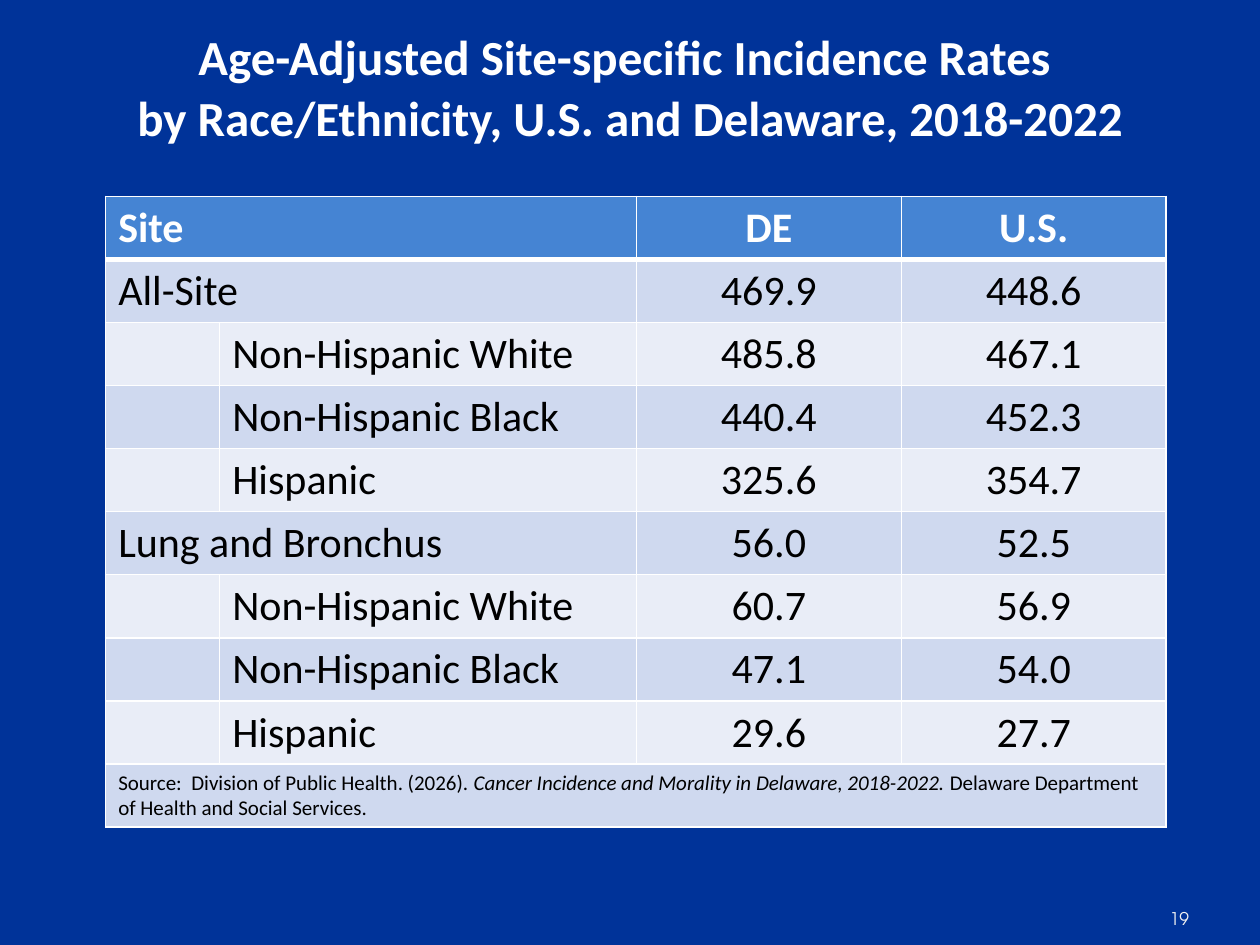
from dataclasses import dataclass

from lxml.etree import SubElement
from pptx import Presentation
from pptx.dml.color import RGBColor
from pptx.enum.text import MSO_ANCHOR, PP_ALIGN
from pptx.oxml.ns import qn
from pptx.util import Cm, Pt

NAVY = RGBColor(0x00, 0x33, 0x99)
WHITE = RGBColor(0xFF, 0xFF, 0xFF)
BLACK = RGBColor(0x00, 0x00, 0x00)
PALE_GREY = RGBColor(0xF2, 0xF2, 0xF2)
HEADER_BLUE = RGBColor(0x45, 0x84, 0xD3)
BAND_DARK = RGBColor(0xCF, 0xD9, 0xEF)
BAND_LIGHT = RGBColor(0xE9, 0xED, 0xF7)

COLUMN_WIDTHS = (Cm(2.3), Cm(8.4), Cm(5.34), Cm(5.34))
ROW_HEIGHT = Cm(1.27)


@dataclass
class Rate:
    label: str
    de: str
    us: str
    is_group: bool = False


@dataclass
class SourcePart:
    text: str
    italic: bool = False


RATES = [
    Rate("Site", "DE", "U.S.", True),
    Rate("All-Site", "469.9", "448.6", True),
    Rate("Non-Hispanic White", "485.8", "467.1"),
    Rate("Non-Hispanic Black", "440.4", "452.3"),
    Rate("Hispanic", "325.6", "354.7"),
    Rate("Lung and Bronchus", "56.0", "52.5", True),
    Rate("Non-Hispanic White", "60.7", "56.9"),
    Rate("Non-Hispanic Black", "47.1", "54.0"),
    Rate("Hispanic", "29.6", "27.7"),
]

SOURCE = [
    SourcePart("Source:  Division of Public Health. (2026)."),
    SourcePart(" Cancer Incidence and Morality in Delaware, 2018-2022. ", True),
    SourcePart("Delaware Department of Health and Social Services."),
]


def set_font(p, size: float, color: RGBColor, bold: bool = False,
             name: str = "Calibri") -> None:
    p.font.name = name
    p.font.size = Pt(size)
    p.font.bold = bold
    p.font.color.rgb = color


def add_text(s, left: Cm, top: Cm, width: Cm, height: Cm, text: str):
    tf = s.shapes.add_textbox(left, top, width, height).text_frame
    tf.word_wrap = True
    tf.vertical_anchor = MSO_ANCHOR.MIDDLE
    p = tf.paragraphs[0]
    p.text = text
    return tf, p


def style_cell(cell, row: int) -> None:
    widths = {
        "a:lnL": 1,
        "a:lnR": 1,
        "a:lnT": 3 if row == 1 else 1,
        "a:lnB": 3 if row == 0 else 1,
    }
    tc_pr = cell._tc.get_or_add_tcPr()
    for tag, width in widths.items():
        line = SubElement(tc_pr, qn(tag), w=str(Pt(width)))
        fill = SubElement(line, qn("a:solidFill"))
        SubElement(fill, qn("a:srgbClr"), val=str(WHITE))
    cell.fill.solid()
    band = BAND_DARK if row % 2 else BAND_LIGHT
    cell.fill.fore_color.rgb = band if row else HEADER_BLUE


def fill_rate(table, row: int, rate: Rate) -> None:
    if rate.is_group:
        table.cell(row, 0).merge(table.cell(row, 1))
    entries = {0 if rate.is_group else 1: rate.label, 2: rate.de, 3: rate.us}
    for column, text in entries.items():
        p = table.cell(row, column).text_frame.paragraphs[0]
        p.text = text
        p.alignment = PP_ALIGN.CENTER if column > 1 else PP_ALIGN.LEFT
        set_font(p, 24, BLACK if row else WHITE, bold=row == 0)


def fill_source(table, row: int) -> None:
    cell = table.cell(row, 0)
    cell.merge(table.cell(row, len(COLUMN_WIDTHS) - 1))
    p = cell.text_frame.paragraphs[0]
    for part in SOURCE:
        r = p.add_run()
        r.text = part.text
        r.font.italic = part.italic
    set_font(p, 12, BLACK)


def add_rates_table(s) -> None:
    rows = len(RATES) + 1
    table = s.shapes.add_table(rows, len(COLUMN_WIDTHS), Cm(2.13), Cm(3.96),
                               sum(COLUMN_WIDTHS), ROW_HEIGHT * rows).table
    for column, width in zip(table.columns, COLUMN_WIDTHS):
        column.width = width
    for row in range(rows):
        for cell in table.rows[row].cells:
            style_cell(cell, row)
    for row, rate in enumerate(RATES):
        fill_rate(table, row, rate)
    fill_source(table, rows - 1)


def main() -> None:
    prs = Presentation()
    prs.slide_width, prs.slide_height = Cm(25.4), Cm(19.05)
    s = prs.slides.add_slide(prs.slide_layouts[6])
    s.background.fill.solid()
    s.background.fill.fore_color.rgb = NAVY

    _, p = add_text(s, Cm(0), Cm(0.03), Cm(25.4), Cm(3.38),
                    "Age-Adjusted Site-specific Incidence Rates \v"
                    "by Race/Ethnicity, U.S. and Delaware, 2018-2022")
    p.alignment = PP_ALIGN.CENTER
    p.line_spacing = Pt(35)
    set_font(p, 28, WHITE, bold=True)

    tf, p = add_text(s, Cm(23.5), Cm(18.01), Cm(1.55), Cm(1.02), "19")
    tf.margin_left = Cm(0.08)
    tf.margin_right = Cm(0.13)
    set_font(p, 10, PALE_GREY, name="TeX Gyre Adventor")

    add_rates_table(s)
    prs.save("out.pptx")


if __name__ == "__main__":
    main()
